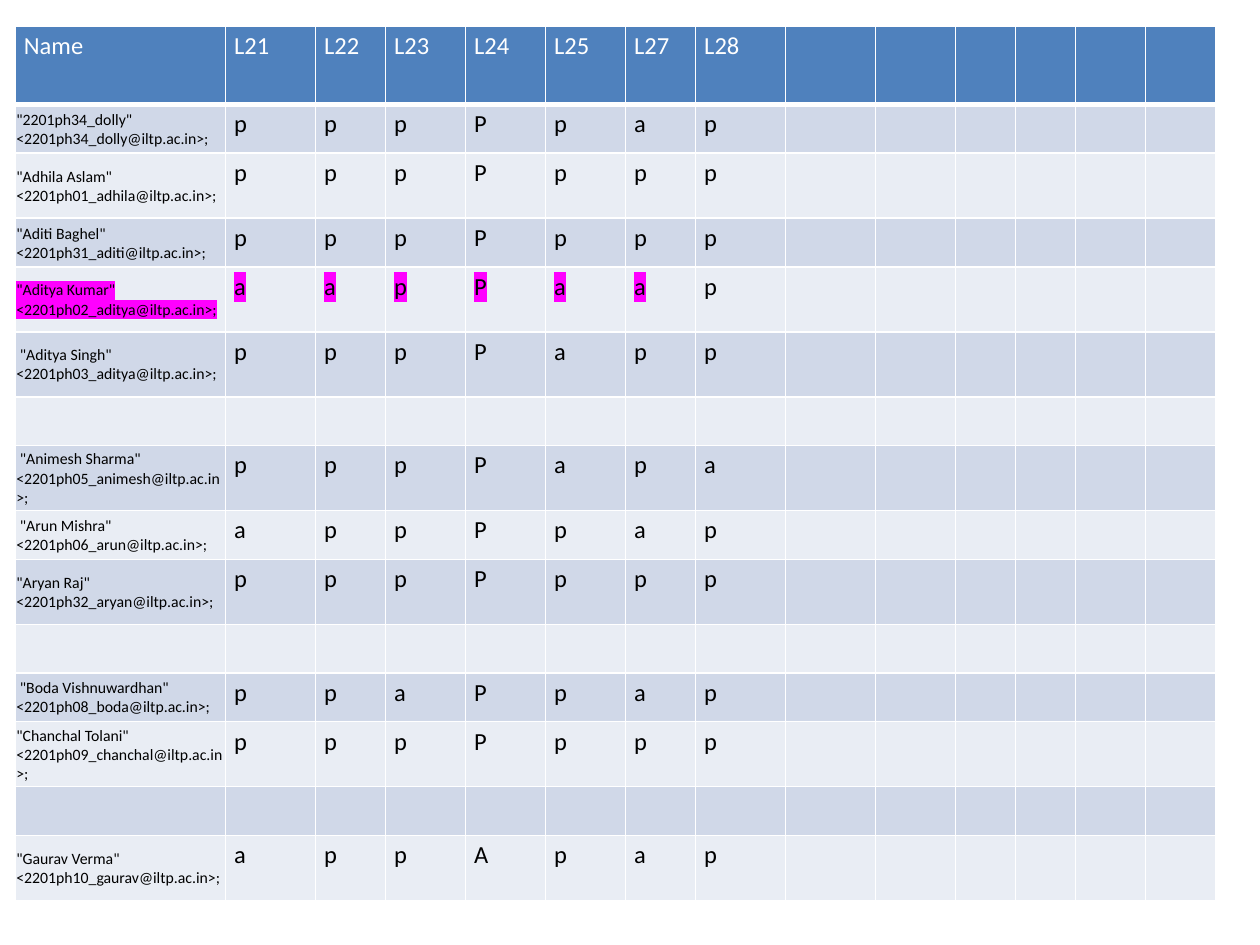
"""Build the attendance register slide for lectures L21 to L28."""
from lxml import etree
from pptx import Presentation
from pptx import util as u
from pptx.dml.color import RGBColor
from pptx.enum import text
from pptx.oxml.ns import qn

COLORS = {"header": "4F81BD", "odd": "D0D8E8", "even": "E9EDF4",
          "white": "FFFFFF", "black": "000000", "flag": "FF00FF"}
COLUMN_UNIT, ROW_UNIT = 9.53 / 120, 0.129
COLUMN_SPANS = [21, 9, 7, 8, 8, 8, 7, 9, 9, 8, 6, 6, 7, 7]
HEADINGS = ["Name", "L21", "L22", "L23", "L24", "L25", "L27", "L28"]
FLAGGED_STUDENT, FLAGGED_COLUMNS = "Aditya Kumar", 7
STUDENTS = [
    ('"2201ph34_dolly" <2201ph34_dolly@iltp.ac.in>;', "pppPpap", 3),
    ('"Adhila Aslam" <2201ph01_adhila@iltp.ac.in>;', "pppPppp", 4),
    ('"Aditi Baghel" <2201ph31_aditi@iltp.ac.in>;', "pppPppp", 3),
    ('"Aditya Kumar" <2201ph02_aditya@iltp.ac.in>;', "aapPaap", 4),
    (' "Aditya Singh" <2201ph03_aditya@iltp.ac.in>;', "pppPapp", 4),
    ("", "", 3),
    (' "Animesh Sharma" <2201ph05_animesh@iltp.ac.in>;', "pppPapa", 4),
    (' "Arun Mishra" <2201ph06_arun@iltp.ac.in>;', "appPpap", 3),
    ('"Aryan Raj" <2201ph32_aryan@iltp.ac.in>;', "pppPppp", 4),
    ("", "", 3),
    (' "Boda Vishnuwardhan" <2201ph08_boda@iltp.ac.in>;', "ppaPpap", 3),
    ('"Chanchal Tolani" <2201ph09_chanchal@iltp.ac.in>;', "pppPppp", 4),
    ("", "", 3),
    ('"Gaurav Verma" <2201ph10_gaurav@iltp.ac.in>;', "appApap", 4),
]


def write(cell, words, size=14, color="black", highlight=None):
    """Put formatted words in a cell."""
    paragraph = cell.text_frame.paragraphs[0]
    if not words:
        etree.SubElement(paragraph._p, qn("a:endParaRPr"), sz=str(size * 100))
        return
    run = paragraph.add_run()
    run.text = words
    run.font.name, run.font.size, run.font.bold = "Calibri", u.Pt(size), False
    run.font.color.rgb = RGBColor.from_string(COLORS[color])
    if highlight:
        marker = etree.Element(qn("a:highlight"))
        etree.SubElement(marker, qn("a:srgbClr"), val=COLORS[highlight])
        run.font._element.find(qn("a:solidFill")).addnext(marker)


def dress(cell, fill, bottom, margins, anchor):
    """Give a cell its borders, fill, margins and anchor."""
    properties = cell._tc.get_or_add_tcPr()
    for side, width in (("L", 1), ("R", 1), ("T", 1), ("B", bottom)):
        line = etree.SubElement(properties, qn(f"a:ln{side}"), w=str(u.Pt(width)))
        paint = etree.SubElement(line, qn("a:solidFill"))
        etree.SubElement(paint, qn("a:srgbClr"), val=COLORS["white"])
    cell.fill.solid()
    cell.fill.fore_color.rgb = RGBColor.from_string(COLORS[fill])
    (cell.margin_left, cell.margin_top,
     cell.margin_right, cell.margin_bottom) = map(u.Inches, margins)
    cell.vertical_anchor = anchor


prs = Presentation()
prs.slide_width, prs.slide_height = u.Inches(10), u.Inches(7.5)
slide = prs.slides.add_slide(prs.slide_layouts[6])
register = slide.shapes.add_table(
    len(STUDENTS) + 1, len(COLUMN_SPANS), u.Inches(0.12), u.Inches(0.21),
    u.Inches(9.53), u.Inches(6.93)).table

for column, span in zip(register.columns, COLUMN_SPANS):
    column.width = u.Inches(span * COLUMN_UNIT)
register.rows[0].height = u.Inches(0.62)
for number, (student, marks, span) in enumerate(STUDENTS, 1):
    register.rows[number].height = u.Inches(span * ROW_UNIT)

entries = [HEADINGS] + [[student, *marks] for student, marks, span in STUDENTS]
for r, entry in enumerate(entries):
    heading = r == 0
    band = "header" if heading else ("even", "odd")[r % 2]
    flagged = FLAGGED_STUDENT in entry[0]
    for c in range(len(COLUMN_SPANS)):
        cell = register.cell(r, c)
        name = c == 0 and not heading
        dress(cell, band, bottom=3 if heading else 1,
              margins=(0.01, 0.01, 0.01, 0) if name else (0.07, 0.04, 0.07, 0.04),
              anchor=text.MSO_ANCHOR.MIDDLE if name else text.MSO_ANCHOR.TOP)
        write(cell, entry[c] if c < len(entry) else "", size=9 if name else 14,
              color="white" if heading else "black",
              highlight="flag" if flagged and c < FLAGGED_COLUMNS else None)

prs.save("out.pptx")
